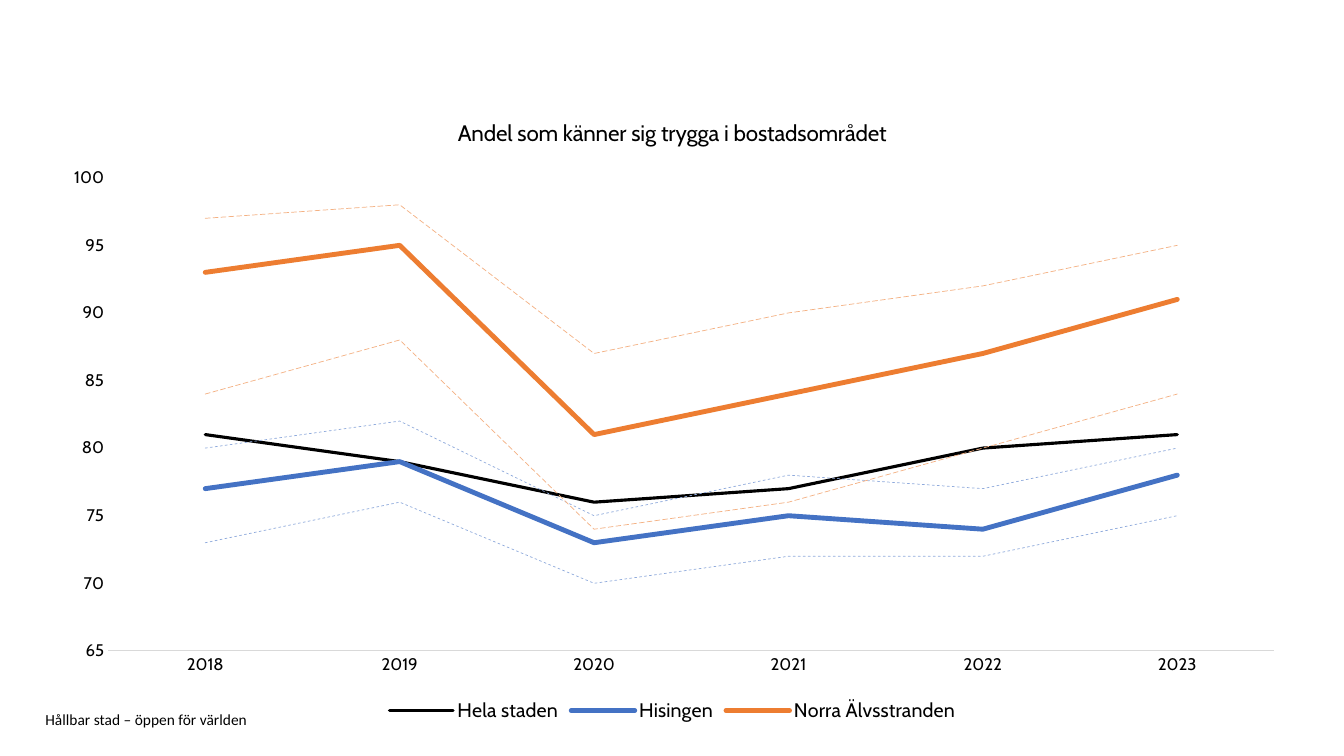
from lxml import etree
from pptx import Presentation
from pptx.chart.data import CategoryChartData
from pptx.dml.color import RGBColor
from pptx.enum.chart import (XL_CHART_TYPE, XL_LEGEND_POSITION, XL_MARKER_STYLE,
                             XL_TICK_MARK)
from pptx.enum.dml import MSO_LINE
from pptx.enum.text import MSO_ANCHOR
from pptx.oxml.ns import qn
from pptx.util import Inches, Pt

DASH, LONG_DASH = MSO_LINE.DASH, MSO_LINE.LONG_DASH
NO_TICK = XL_TICK_MARK.NONE

THEME = {
    "font": "Cabin", "footer_font": "Calibri",
    "text": "000000", "axis": "D9D9D9",
    "city": "000000", "hisingen": "4472C4", "hisingen_band": "8FAADC",
    "norra": "ED7D31", "norra_band": "F4B183",
    "title_size": 16, "legend_size": 14, "axis_size": 12, "footer_size": 11,
}

FOOTER = "Hållbar stad – öppen för världen"
TITLE = "Andel som känner sig trygga i bostadsområdet"
YEARS = ["2018", "2019", "2020", "2021", "2022", "2023"]
# name, values, colour, line width, dash (dashed bands stay out of the legend)
SERIES = [
    ("Hela staden", (81, 79, 76, 77, 80, 81), "city", 2.25, None),
    ("Hisingen", (77, 79, 73, 75, 74, 78), "hisingen", 3.5, None),
    ("Series 3", (73, 76, 70, 72, 72, 75), "hisingen_band", 0.5, DASH),
    ("Series 4", (80, 82, 75, 78, 77, 80), "hisingen_band", 0.5, DASH),
    ("Norra Älvsstranden", (93, 95, 81, 84, 87, 91), "norra", 3.5, None),
    ("Series 6", (84, 88, 74, 76, 80, 84), "norra_band", 0.5, LONG_DASH),
    ("Series 7", (97, 98, 87, 90, 92, 95), "norra_band", 0.5, LONG_DASH),
]
PLOT_AREA = {"x": 0.05, "y": 0.13, "w": 0.93, "h": 0.75}


def color(name):
    return RGBColor.from_string(THEME[name])


def set_font(font, size, name="font"):
    font.name = THEME[name]
    font.size = Pt(THEME[size])
    font.bold = False
    font.color.rgb = color("text")


def add_val(parent, tag, value):
    etree.SubElement(parent, qn(tag)).set("val", str(value))


def place_plot(chart):
    """Fix the inner plot area as fractions of the chart."""
    plot_area = chart._chartSpace.find(".//" + qn("c:plotArea"))
    for old in plot_area.findall(qn("c:layout")):
        plot_area.remove(old)
    layout = etree.Element(qn("c:layout"))
    manual = etree.SubElement(layout, qn("c:manualLayout"))
    add_val(manual, "c:layoutTarget", "inner")
    for side in "xy":
        add_val(manual, f"c:{side}Mode", "edge")
    for side, share in PLOT_AREA.items():
        add_val(manual, f"c:{side}", share)
    plot_area.insert(0, layout)


def hide_bands(legend):
    """Drop the dashed series from the legend."""
    position = legend._element.find(qn("c:legendPos"))
    for i, (*_, dash) in reversed(list(enumerate(SERIES))):
        if dash is not None:
            entry = etree.Element(qn("c:legendEntry"))
            add_val(entry, "c:idx", i)
            add_val(entry, "c:delete", 1)
            position.addnext(entry)


def format_axes(chart):
    value, category = chart.value_axis, chart.category_axis
    for axis in (value, category):
        axis.major_tick_mark = axis.minor_tick_mark = NO_TICK
        axis.has_major_gridlines = False
        set_font(axis.tick_labels.font, "axis_size")
    value.minimum_scale, value.maximum_scale, value.major_unit = 65, 100, 5
    value.tick_labels.number_format = "0"
    value.tick_labels.number_format_is_linked = False
    value.format.line.fill.background()
    category.format.line.color.rgb = color("axis")
    category.format.line.width = Pt(0.75)


def add_safety_chart(s):
    data = CategoryChartData(number_format="0")
    data.categories = YEARS
    for name, values, *_ in SERIES:
        data.add_series(name, values)
    chart = s.shapes.add_chart(XL_CHART_TYPE.LINE, Inches(0.45), Inches(0.95),
                               Inches(12.44), Inches(6.26), data).chart
    set_font(chart.font, "axis_size")

    chart.has_title = True
    p = chart.chart_title.text_frame.paragraphs[0]
    p.text = TITLE
    set_font(p.font, "title_size")

    chart.has_legend = True
    chart.legend.position = XL_LEGEND_POSITION.BOTTOM
    chart.legend.include_in_layout = False
    set_font(chart.legend.font, "legend_size")
    hide_bands(chart.legend)

    format_axes(chart)
    place_plot(chart)
    chart.plots[0].vary_by_categories = False
    for ser, (_, _, tone, width, dash) in zip(chart.plots[0].series, SERIES):
        ser.smooth = False
        ser.marker.style = XL_MARKER_STYLE.NONE
        line = ser.format.line
        line.color.rgb = color(tone)
        line.width = Pt(width)
        if dash is not None:
            line.dash_style = dash
        ser._element.find(".//" + qn("a:ln")).set("cap", "rnd")


def add_footer(s):
    tf = s.shapes.add_textbox(Inches(0.45), Inches(7.06),
                              Inches(9.45), Inches(0.16)).text_frame
    tf.word_wrap = True
    tf.vertical_anchor = MSO_ANCHOR.MIDDLE
    tf.margin_left = tf.margin_right = tf.margin_top = tf.margin_bottom = 0
    p = tf.paragraphs[0]
    p.text = FOOTER
    set_font(p.font, "footer_size", "footer_font")


def main():
    prs = Presentation()
    prs.slide_width, prs.slide_height = Inches(13.33), Inches(7.5)
    s = prs.slides.add_slide(prs.slide_layouts[6])
    add_footer(s)
    add_safety_chart(s)
    prs.save("out.pptx")


if __name__ == "__main__":
    main()
